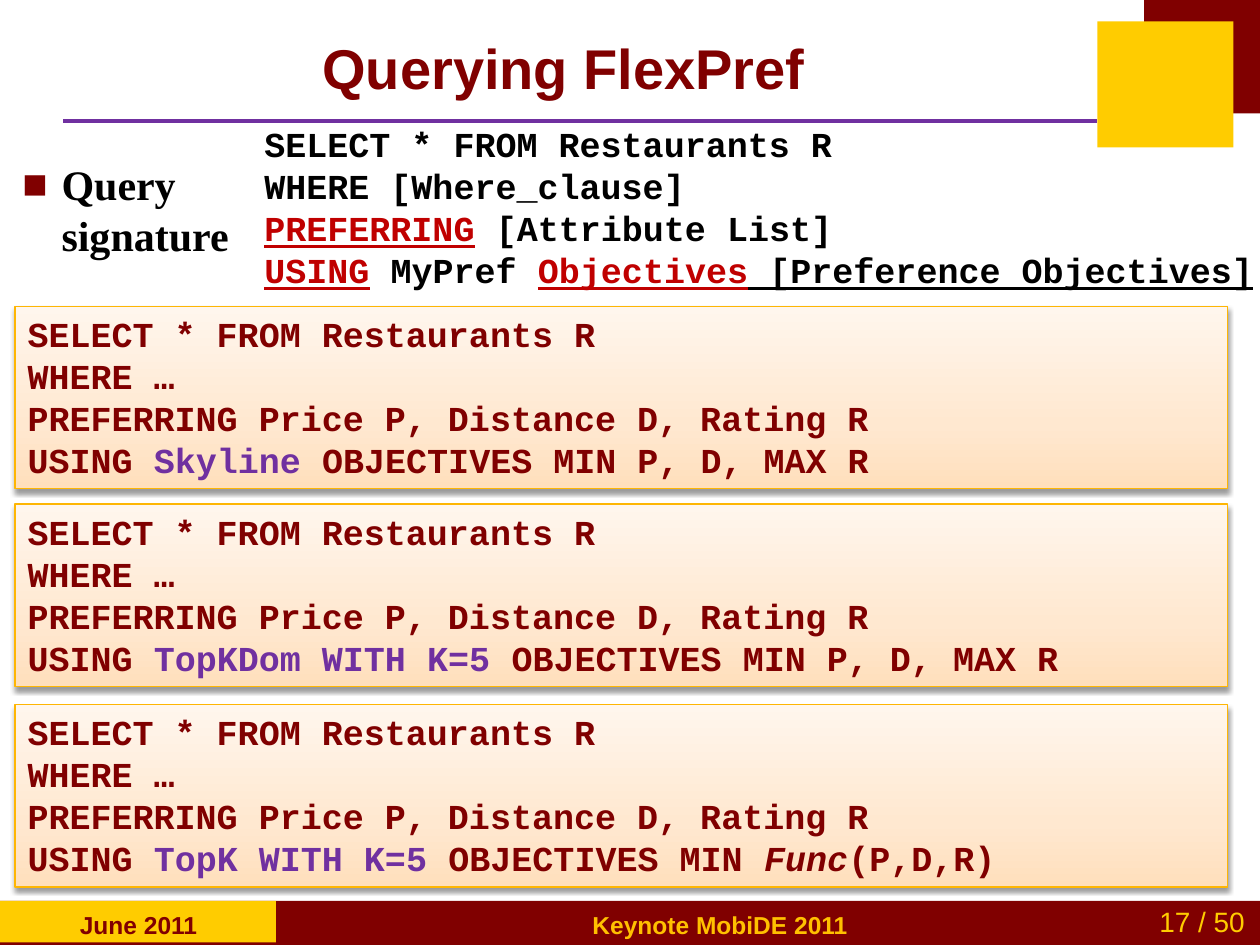
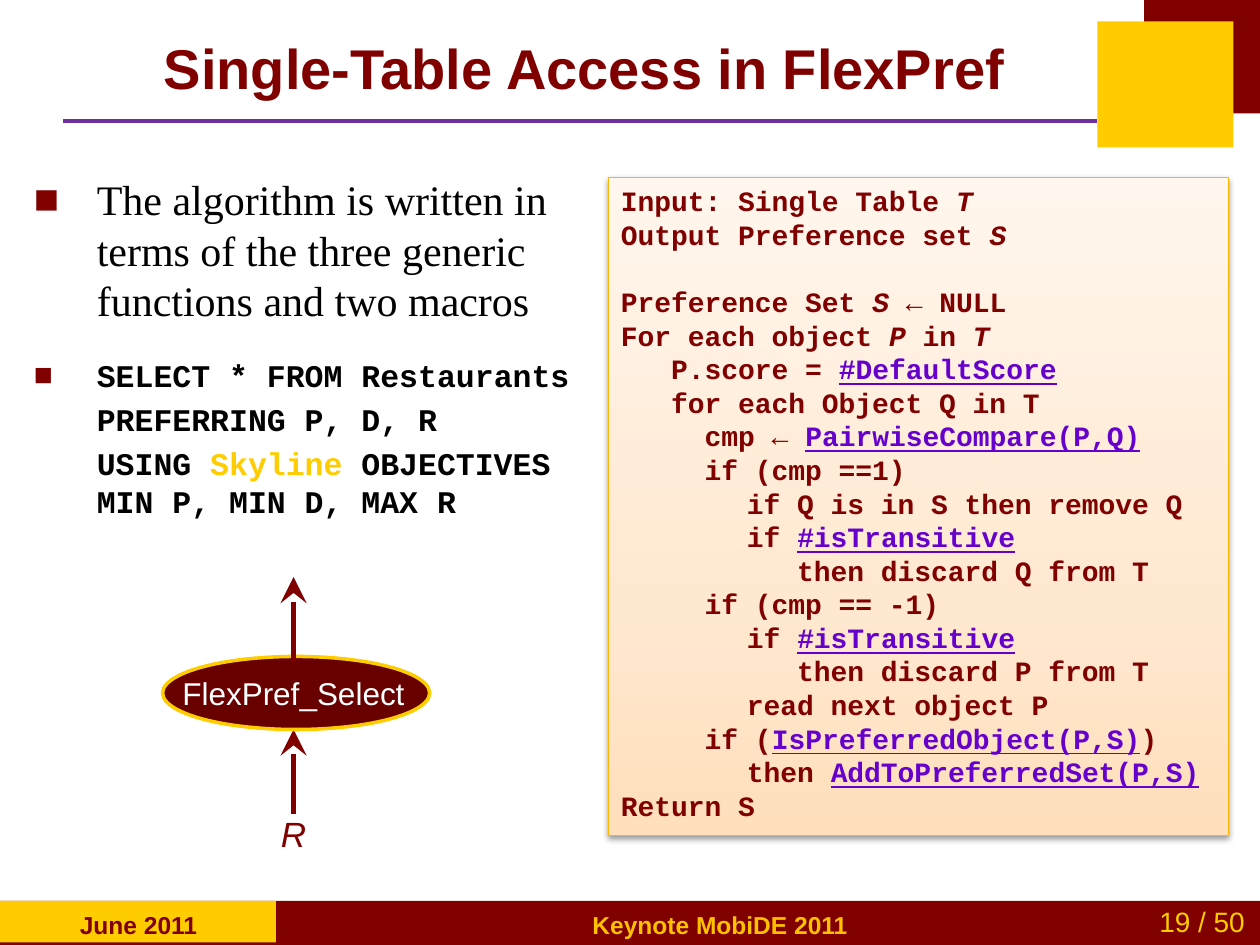
import pptx
import pptx.util
import pptx.dml.color
import pptx.enum.shapes
import pptx.enum.text
import pptx.oxml
import pptx.oxml.ns

Inches = pptx.util.Inches
Pt = pptx.util.Pt
KIND = pptx.enum.shapes.MSO_SHAPE
ALIGN = pptx.enum.text.PP_ALIGN
ANCHOR = pptx.enum.text.MSO_ANCHOR
NS = 'xmlns:a="http://schemas.openxmlformats.org/drawingml/2006/main"'

HEX = {
    "maroon": "800000", "gold": "FFCC00", "amber": "FFC000", "purple": "7030A0",
    "violet": "6600CC", "red": "C00000", "black": "000000", "white": "FFFFFF",
    "oval": "680000", "edge": "FEB604",
}
FADE = [(0, "FFDFBC"), (35, "FFE8D0"), (100, "FFF6ED")]
SANS, SERIF, MONO = "Arial", "Times New Roman", "Courier New"

MARK = {
    "name": {"hue": "purple"},
    "key": {"hue": "red", "line": True},
    "under": {"line": True},
    "call": {"hue": "violet", "line": True},
    "gold": {"hue": "gold"},
    "var": {"slant": True},
}

BANDS = [
    ((0, 7.15, 10, 0.35), "maroon"), ((0, 7.15, 2.19, 0.33), "gold"),
    ((9.08, 0, 0.92, 0.9), "maroon"), ((8.71, 0.17, 1.08, 1), "gold"),
]

FORM = [
    ["SELECT * FROM Restaurants R"],
    ["WHERE [Where_clause]"],
    [("PREFERRING", "key"), " [Attribute List]"],
    [("USING", "key"), " MyPref ", ("Objectives", "key"),
     (" [Preference Objectives]", "under")],
]
START = [
    ["SELECT * FROM Restaurants R"],
    ["WHERE …"],
    ["PREFERRING Price P, Distance D, Rating R"],
]
USING = [
    (2.43, ["USING ", ("Skyline", "name"), " OBJECTIVES MIN P, D, MAX R"]),
    (4, ["USING ", ("TopKDom WITH K=5 ", "name"), "OBJECTIVES MIN P, D, MAX R"]),
    (5.59, ["USING ", ("TopK WITH K=5 ", "name"), "OBJECTIVES MIN ",
            ("Func", "var"), "(P,D,R)"]),
]

POINT = "The algorithm is written in terms of the three generic functions and two macros"
QUERY = [
    ["SELECT * FROM Restaurants"],
    ["PREFERRING P, D, R"],
    ["USING ", ("Skyline ", "gold"), "OBJECTIVES MIN P, MIN D, MAX R"],
]
HEAD = [
    ["Input: Single Table ", ("T", "var")],
    ["Output Preference set ", ("S", "var")],
]
STEPS = [
    ["Preference Set ", ("S ", "var"), "← NULL"],
    ["For each object ", ("P", "var"), " in ", ("T", "var")],
    ["   P.score = ", ("#DefaultScore", "call")],
    ["   for each Object Q in T"],
    ["     cmp ← ", ("PairwiseCompare(P,Q)", "call")],
    ["     if (cmp ==1)"],
    ["\tif Q is in S then remove Q"],
    ["\tif ", ("#isTransitive", "call")],
    ["\t   then discard Q from T"],
    ["     if (cmp == -1)"],
    ["\tif ", ("#isTransitive", "call")],
    ["\t   then discard P from T"],
    ["\tread next object P"],
    ["     if (", ("IsPreferredObject(P,S)", "call"), ")"],
    ["\tthen ", ("AddToPreferredSet(P,S)", "call")],
    ["Return S"],
]


def tint(hue):
    return pptx.dml.color.RGBColor.from_string(HEX[hue])


def node(xml):
    return pptx.oxml.parse_xml(f"<a:root {NS}>{xml}</a:root>")[0]


def write(frame, rows, font, size, hue, bold=False, align=ALIGN.LEFT):
    made = []
    for row in rows:
        para = frame.add_paragraph() if frame.paragraphs[0].runs else frame.paragraphs[0]
        para.alignment = align
        for part in row:
            text, mark = part if isinstance(part, tuple) else (part, None)
            look = MARK.get(mark, {})
            run = para.add_run()
            run.text = text
            run.font.name = font
            run.font.size = Pt(size)
            run.font.bold = bold
            run.font.italic = look.get("slant", False)
            run.font.underline = look.get("line", False)
            run.font.color.rgb = tint(look.get("hue", hue))
        made.append(para)
    return made


def place(box):
    return [Inches(n) for n in box]


def label(slide, box, rows, *look, **more):
    frame = slide.shapes.add_textbox(*place(box)).text_frame
    frame.word_wrap = True
    write(frame, rows, *look, **more)
    return frame


def hang(para, left, dot=False):
    props = para._p.get_or_add_pPr()
    props.set("marL", str(Inches(left)))
    props.set("indent", str(-Inches(left) if dot else 0))
    if dot:
        props.append(node(f'<a:buClr><a:srgbClr val="{HEX["maroon"]}"/></a:buClr>'))
        props.append(node('<a:buFont typeface="Arial"/>'))
        props.append(node('<a:buChar char="■"/>'))


def block(slide, kind, box, hue, edge=None, width=0):
    shape = slide.shapes.add_shape(kind, *place(box))
    shape.shadow.inherit = False
    shape.fill.solid()
    shape.fill.fore_color.rgb = tint(hue)
    if edge:
        shape.line.color.rgb = tint(edge)
        shape.line.width = Pt(width)
    else:
        shape.line.fill.background()
    return shape


def panel(slide, box, rows, size):
    shape = block(slide, KIND.RECTANGLE, box, "white", "edge", 0.75)
    shape.fill.gradient()
    shape.fill.gradient_angle = 90
    props = shape._element.spPr
    stops = props.find(".//" + pptx.oxml.ns.qn("a:gsLst"))
    for stop in list(stops):
        stops.remove(stop)
    for spot, shade in FADE:
        stops.append(node(f'<a:gs pos="{spot * 1000}"><a:srgbClr val="{shade}"/></a:gs>'))
    props.find(pptx.oxml.ns.qn("a:effectLst")).append(node(
        f'<a:outerShdw blurRad="{Pt(3.1)}" dist="{Pt(1.6)}" dir="5400000" rotWithShape="0">'
        '<a:srgbClr val="000000"><a:alpha val="38000"/></a:srgbClr></a:outerShdw>'))
    frame = shape.text_frame
    frame.word_wrap = True
    frame.vertical_anchor = ANCHOR.TOP
    return write(frame, rows, MONO, size, "maroon", bold=True)


def rule(slide, ends, hue, width, arrow=False):
    line = slide.shapes.add_connector(pptx.enum.shapes.MSO_CONNECTOR.STRAIGHT, *place(ends))
    line.line.color.rgb = tint(hue)
    line.line.width = Pt(width)
    if arrow:
        line.line._get_or_add_ln().append(node('<a:tailEnd type="stealth" w="lg" len="lg"/>'))
    line._element.spPr.append(node("<a:effectLst/>"))


def base(deck, title, box, page):
    slide = deck.slides.add_slide(deck.slide_layouts[6])
    rule(slide, (0.5, 0.96, 8.71, 0.96), "purple", 2.25)
    for band, hue in BANDS:
        block(slide, KIND.RECTANGLE, band, hue)
    mid = ALIGN.CENTER
    label(slide, (0.12, 7.17, 1.96, 0.33), [["June 2011"]], SANS, 14, "maroon", True, mid)
    label(slide, (9.03, 7.13, 1.02, 0.37), [[f"{page} / 50"]], SANS, 16, "gold", False, mid)
    label(slide, (4.34, 7.17, 2.75, 0.34), [["Keynote MobiDE 2011"]], SANS, 14, "amber", True, mid)
    frame = label(slide, box, [[title]], SANS, 32, "maroon", True, mid)
    frame.vertical_anchor = ANCHOR.MIDDLE
    return slide


def query(deck):
    slide = base(deck, "Querying FlexPref", (0.33, 0.03, 8.29, 1.01), 17)
    for top, last in USING:
        panel(slide, (0.12, top, 9.62, 1.45), START + [last], 20)
    label(slide, (2, 0.92, 8.46, 1.45), FORM, MONO, 20, "black", True)
    frame = label(slide, (0.08, 1.21, 1.88, 1.42), [["Query signature"]], SERIF, 24, "black", True)
    hang(frame.paragraphs[0], 0.31, True)


def access(deck):
    slide = base(deck, "Single-Table Access in FlexPref", (0.58, 0.03, 8.12, 1.01), 19)
    frame = label(slide, (0.17, 1.33, 4.71, 2.96), [[POINT]], SERIF, 24, "black")
    lines = write(frame, QUERY, MONO, 18, "black", True)
    for spot, para in enumerate(frame.paragraphs):
        hang(para, 0.5, spot < 2)
    for para, gap in zip(lines, (17.6, 3.6, 3.6)):
        para.space_before = Pt(gap)

    code = panel(slide, (4.83, 1.41, 4.92, 5.22), HEAD + STEPS, 16)
    for para in code:
        para._p.get_or_add_pPr().append(
            node(f'<a:tabLst><a:tab pos="{Inches(1)}" algn="l"/></a:tabLst>'))
    code[len(HEAD)].space_before = Pt(19.2)

    rule(slide, (2.33, 6.46, 2.33, 5.79), "maroon", 3, True)
    block(slide, KIND.OVAL, (1.29, 5.21, 2.12, 0.58), "oval", "gold", 2)
    label(slide, (1.33, 5.3, 2, 0.4), [["FlexPref_Select"]], SANS, 18, "white", align=ALIGN.CENTER)
    label(slide, (2.08, 6.4, 0.5, 0.44), [[("R", "var")]], SANS, 20, "maroon", align=ALIGN.CENTER)
    rule(slide, (2.33, 5.25, 2.33, 4.58), "maroon", 3, True)


def main():
    deck = pptx.Presentation()
    deck.slide_width, deck.slide_height = Inches(10), Inches(7.5)
    query(deck)
    access(deck)
    deck.save("out.pptx")


if __name__ == "__main__":
    main()
